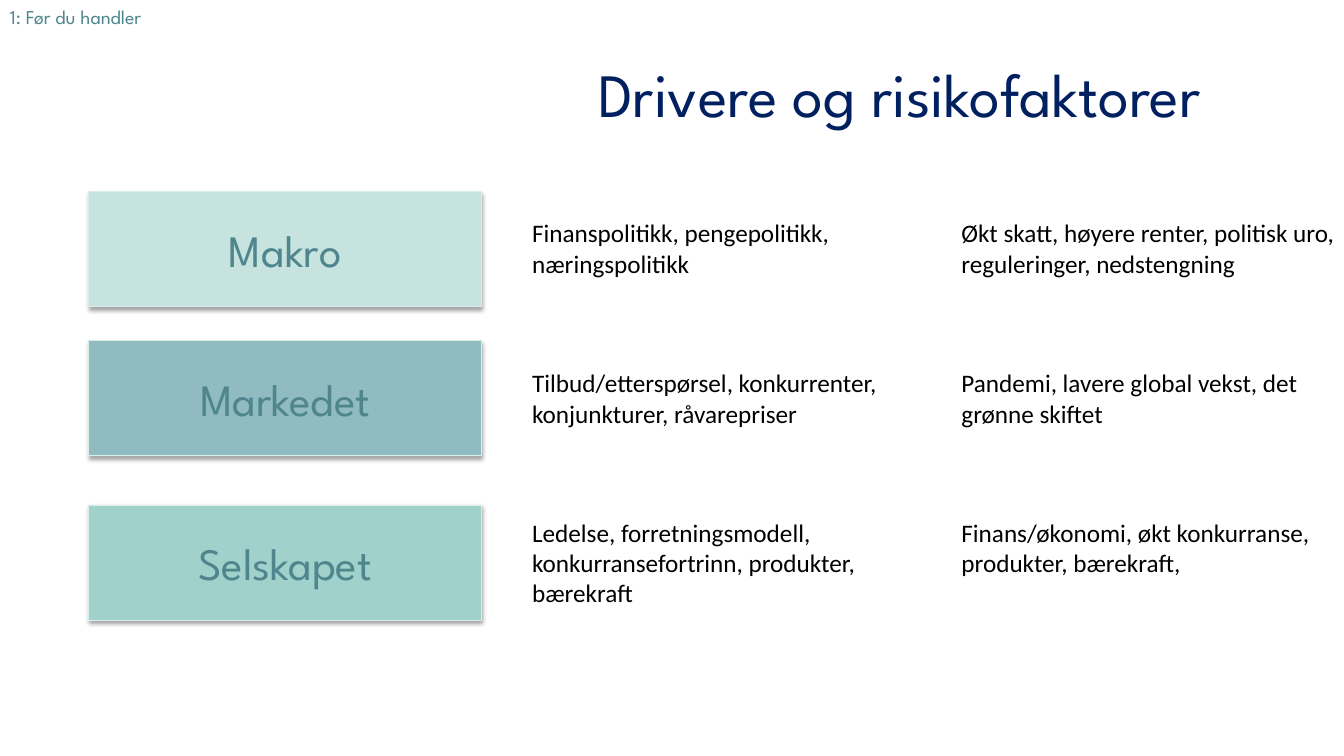
from lxml.etree import SubElement
from pptx import Presentation
from pptx.dml.color import RGBColor
from pptx.enum.shapes import MSO_SHAPE as Shape
from pptx.enum.text import MSO_ANCHOR as Anchor, MSO_AUTO_SIZE as AutoSize, PP_ALIGN as Align
from pptx.oxml.ns import qn
from pptx.util import Cm, Pt

COLORS = {
    "title": "002060",
    "accent": "4F868E",
    "body": "000000",
    "outline": "D9EDEA",
    "shadow": "000000",
    "macro": "C6E3DF",
    "market": "90BBC1",
    "company": "A0D1CA",
}
HEADING_FONT, BODY_FONT = "League Spartan", "Calibri"
COLUMN_WIDTH = 9.9
LEVEL_LEFT, DRIVERS_LEFT, RISKS_LEFT = 2.24, 13.16, 23.98
LEVEL_HEIGHT = 2.9
TWO_LINES, THREE_LINES = 1.8, 2.57

# level, fill, box top, text top, (drivers, height), (risks, height)
LEVELS = [
    ("Makro", "macro", 4.83, 5.36,
     ("Finanspolitikk, pengepolitikk, næringspolitikk", TWO_LINES),
     ("Økt skatt, høyere renter, politisk uro, reguleringer, nedstengning", TWO_LINES)),
    ("Markedet", "market", 8.59, 9.14,
     ("Tilbud/etterspørsel, konkurrenter, konjunkturer, råvarepriser", TWO_LINES),
     ("Pandemi, lavere global vekst, det grønne skiftet", TWO_LINES)),
    ("Selskapet", "company", 12.73, 12.9,
     ("Ledelse, forretningsmodell, konkurransefortrinn, produkter, bærekraft", THREE_LINES),
     ("Finans/økonomi, økt konkurranse, produkter, bærekraft,", TWO_LINES)),
]


def rgb(name):
    return RGBColor.from_string(COLORS[name])


class SlideBuilder:
    """Holds the current slide and its text and shape styles."""

    def __init__(self, slide):
        self.slide = slide

    def set_text(self, frame, text, size, font, color, align=Align.LEFT):
        frame.text = text
        frame.word_wrap = True
        paragraph = frame.paragraphs[0]
        paragraph.alignment = align
        for run in paragraph.runs:
            run.font.size = Pt(size)
            run.font.name = font
            run.font.color.rgb = rgb(color)

    def title(self, text, left, top, width, height):
        heading = self.slide.shapes.title
        heading.left, heading.top = Cm(left), Cm(top)
        heading.width, heading.height = Cm(width), Cm(height)
        self.set_text(heading.text_frame, text, 44, HEADING_FONT, "title", Align.CENTER)
        heading.text_frame.vertical_anchor = Anchor.MIDDLE

    def text_box(self, shapes, text, left, top, width, height,
                 size=18, font=BODY_FONT, color="body"):
        box = shapes.add_textbox(Cm(left), Cm(top), Cm(width), Cm(height))
        self.set_text(box.text_frame, text, size, font, color)
        box.text_frame.auto_size = AutoSize.SHAPE_TO_FIT_TEXT

    def level_box(self, shapes, text, fill, top):
        box = shapes.add_shape(Shape.RECTANGLE, Cm(LEVEL_LEFT), Cm(top),
                               Cm(COLUMN_WIDTH), Cm(LEVEL_HEIGHT))
        box.fill.solid()
        box.fill.fore_color.rgb = rgb(fill)
        box.line.color.rgb = rgb("outline")
        box.line.width = Pt(0.75)
        self.soft_shadow(box)
        self.set_text(box.text_frame, text, 32, HEADING_FONT, "accent", Align.CENTER)
        box.text_frame.vertical_anchor = Anchor.MIDDLE

    def soft_shadow(self, box):
        """Give the box a faint shadow that falls straight down."""
        box.shadow.inherit = False
        effects = box._element.spPr.find(qn("a:effectLst"))
        shadow = SubElement(effects, qn("a:outerShdw"), blurRad=str(Pt(3.1)),
                            dist=str(Pt(1.8)), dir="5400000", rotWithShape="0")
        color = SubElement(shadow, qn("a:srgbClr"), val=COLORS["shadow"])
        SubElement(color, qn("a:alpha"), val="35000")

    def level_row(self, level, fill, box_top, text_top, drivers, risks):
        row = self.slide.shapes.add_group_shape().shapes
        self.level_box(row, level, fill, box_top)
        for left, (factors, height) in ((DRIVERS_LEFT, drivers), (RISKS_LEFT, risks)):
            self.text_box(row, factors, left, text_top, COLUMN_WIDTH, height)


def main():
    deck = Presentation()
    deck.slide_width, deck.slide_height = Cm(33.87), Cm(19.05)
    builder = SlideBuilder(deck.slides.add_slide(deck.slide_layouts[5]))
    builder.title("Drivere og risikofaktorer", DRIVERS_LEFT, 0.76, 19.02, 3.18)
    for level in LEVELS:
        builder.level_row(*level)
    builder.text_box(builder.slide.shapes, "1: Før du handler", 0, 0, 9.5, 0.86,
                     size=14, font=HEADING_FONT, color="accent")
    deck.save("out.pptx")


if __name__ == "__main__":
    main()
